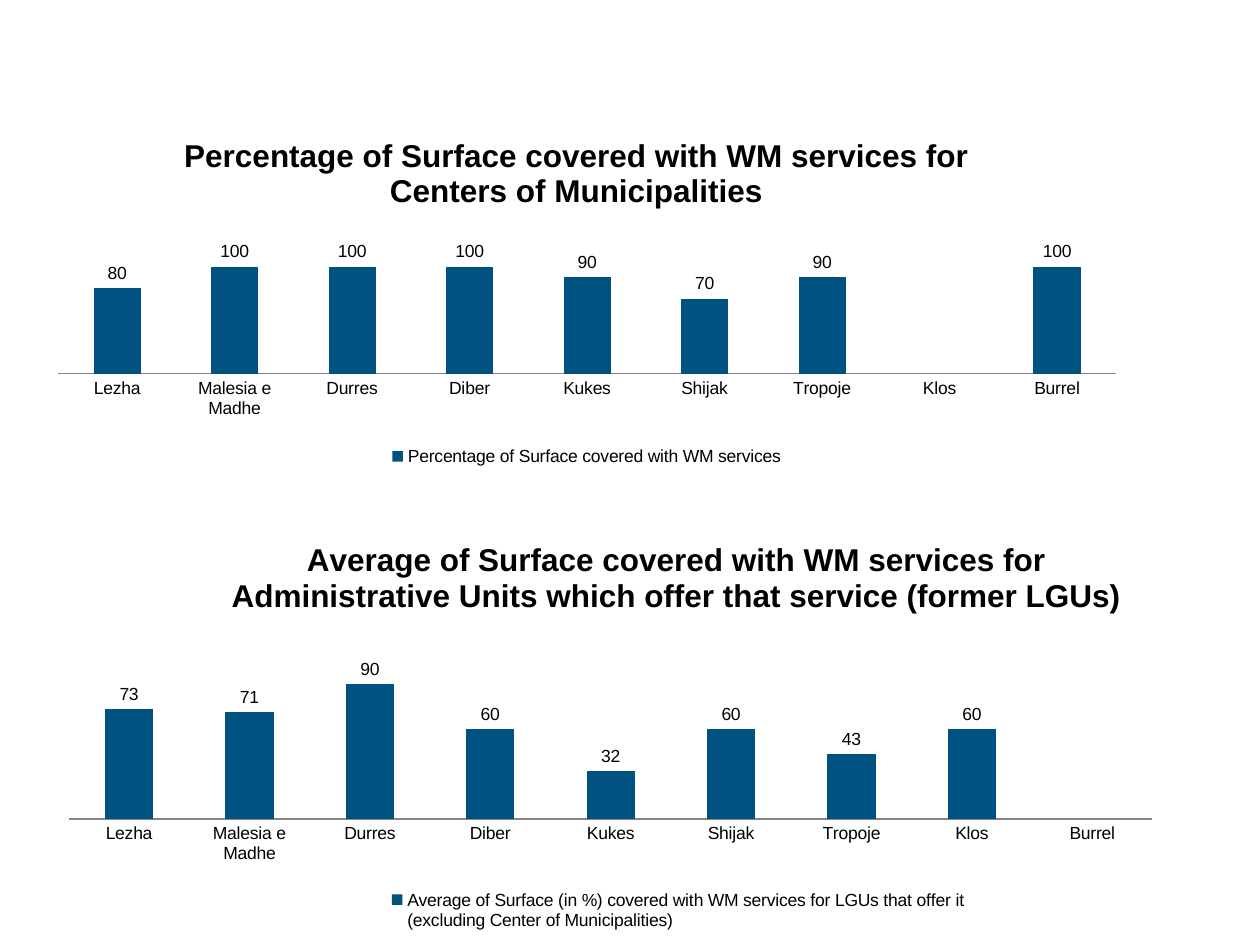
"""Build a slide with two column charts of waste management coverage by municipality."""
from lxml import etree
from pptx import Presentation
from pptx.chart.data import CategoryChartData
from pptx.dml.color import RGBColor
from pptx.enum.chart import XL_CHART_TYPE, XL_LABEL_POSITION, XL_LEGEND_POSITION, XL_TICK_MARK
from pptx.oxml.ns import qn
from pptx.util import Cm, Pt

COLUMN_CLUSTERED = XL_CHART_TYPE.COLUMN_CLUSTERED
OUTSIDE_END = XL_LABEL_POSITION.OUTSIDE_END
LEGEND_BOTTOM = XL_LEGEND_POSITION.BOTTOM
NO_TICK = XL_TICK_MARK.NONE
BLUE = RGBColor(0x00, 0x53, 0x80)
BLACK = RGBColor(0, 0, 0)
GRAY = RGBColor(0x86, 0x86, 0x86)
FONT = "Arial"
BLANK_LAYOUT = 6

MUNICIPALITIES = ["Lezha", "Malesia e Madhe", "Durres", "Diber", "Kukes",
                  "Shijak", "Tropoje", "Klos", "Burrel"]
PLOT_AREA = {"x": 0.021, "y": 0.347, "w": 0.959, "h": 0.306}
CHARTS = [
    {
        "title": "Percentage of Surface covered with WM services for Centers of Municipalities",
        "series": "Percentage of Surface covered with WM services",
        "values": [80, 100, 100, 100, 90, 70, 90, None, 100],
        "maximum": 120,
        "box": (0.71, 2.01, 22.23, 8.46),
        "title_place": {"x": 0.13, "y": 0.07},
        "legend_place": {"x": 0.31, "y": 0.81, "w": 0.38, "h": 0.08},
    },
    {
        "title": "Average of Surface covered with WM services for Administrative Units "
                 "which offer that service (former LGUs)",
        "series": "Average of Surface (in %) covered with WM services for LGUs that offer it "
                  "(excluding Center of Municipalities)",
        "values": [73, 71, 90, 60, 32, 60, 43, 60, None],
        "maximum": 100,
        "box": (0.91, 10.06, 22.78, 9.88),
        "title_place": {"x": 0.16, "y": 0.07},
        "legend_place": {"x": 0.29, "y": 0.78, "w": 0.54, "h": 0.12},
    },
]


def set_font(font, size, bold=False):
    font.name = FONT
    font.size = Pt(size)
    font.bold = bold
    font.color.rgb = BLACK


def place(element, position, predecessor=None, inner=False):
    """Give a chart part a manual layout in fractions of the chart."""
    for existing in element.findall(qn("c:layout")):
        element.remove(existing)
    layout = etree.Element(qn("c:layout"))
    manual = etree.SubElement(layout, qn("c:manualLayout"))
    settings = {"layoutTarget": "inner"} if inner else {}
    settings.update(xMode="edge", yMode="edge", **position)
    for name, value in settings.items():
        etree.SubElement(manual, qn(f"c:{name}")).set("val", str(value))
    if predecessor is None:
        element.insert(0, layout)
    else:
        element.find(qn(predecessor)).addnext(layout)


def add_column_chart(slide, content):
    data = CategoryChartData()
    data.categories = MUNICIPALITIES
    data.add_series(content["series"], content["values"])
    box = [Cm(length) for length in content["box"]]
    chart = slide.shapes.add_chart(COLUMN_CLUSTERED, *box, data).chart
    set_font(chart.font, 10)

    chart.has_title = True
    title = chart.chart_title
    title.include_in_layout = False
    title.text_frame.text = content["title"]
    set_font(title.text_frame.paragraphs[0].font, 18, bold=True)
    place(title._element, content["title_place"], "c:tx")

    chart.has_legend = True
    legend = chart.legend
    legend.position = LEGEND_BOTTOM
    legend.include_in_layout = False
    set_font(legend.font, 10)
    place(legend._element, content["legend_place"], "c:legendPos")

    chart.value_axis.visible = False
    chart.value_axis.has_major_gridlines = False
    chart.value_axis.minimum_scale = 0
    chart.value_axis.maximum_scale = content["maximum"]
    chart.category_axis.major_tick_mark = NO_TICK
    chart.category_axis.format.line.color.rgb = GRAY

    plot = chart.plots[0]
    plot.vary_by_categories = False
    plot.gap_width = 150
    plot.overlap = -25
    plot.has_data_labels = True
    plot.data_labels.show_value = True
    plot.data_labels.position = OUTSIDE_END
    set_font(plot.data_labels.font, 10)
    fill = plot.series[0].format.fill
    fill.solid()
    fill.fore_color.rgb = BLUE
    place(chart._chartSpace.chart.plotArea, PLOT_AREA, inner=True)


def main():
    presentation = Presentation()
    presentation.slide_width = Cm(25.4)
    presentation.slide_height = Cm(19.05)
    slide = presentation.slides.add_slide(presentation.slide_layouts[BLANK_LAYOUT])
    for content in CHARTS:
        add_column_chart(slide, content)
    presentation.save("out.pptx")


if __name__ == "__main__":
    main()
